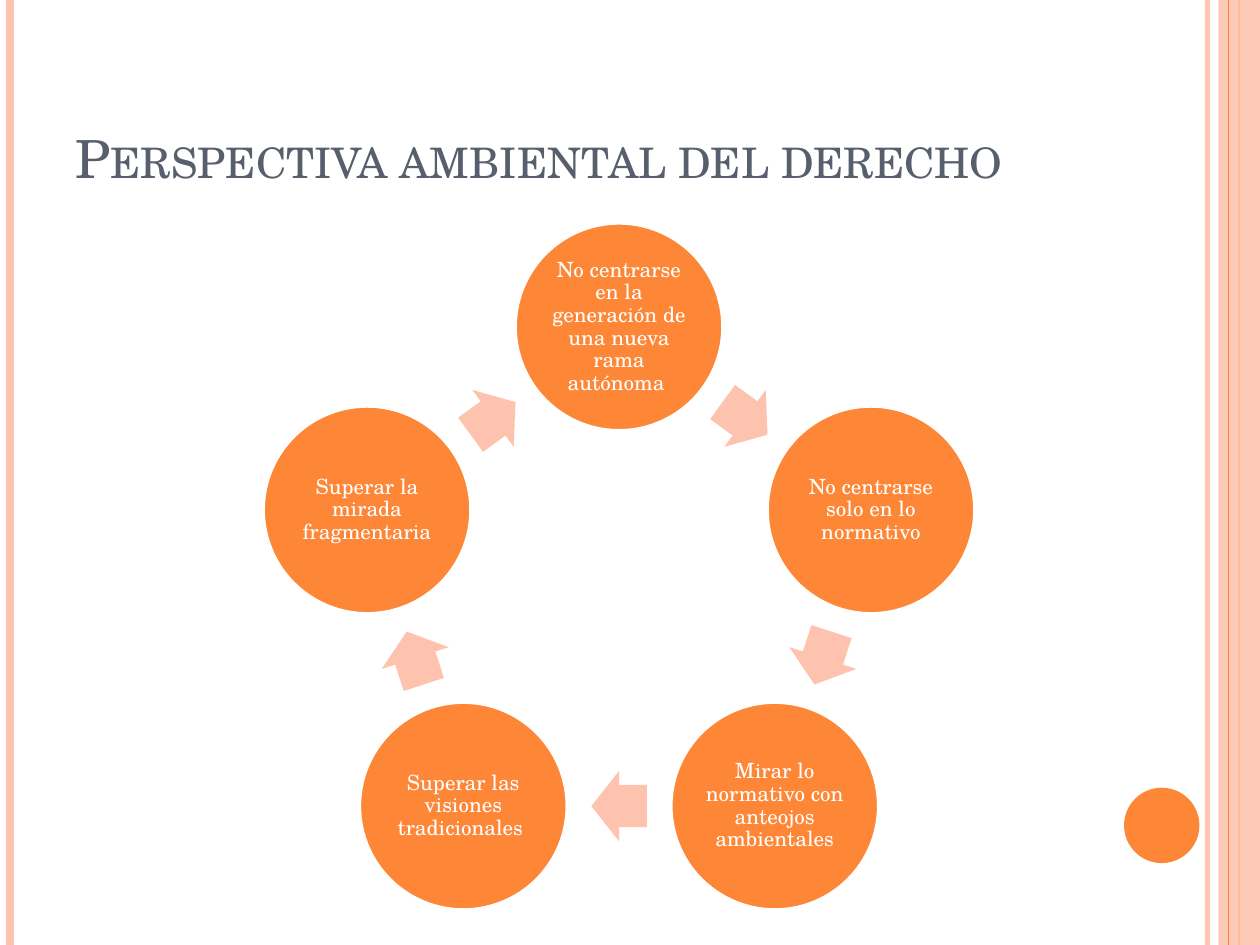
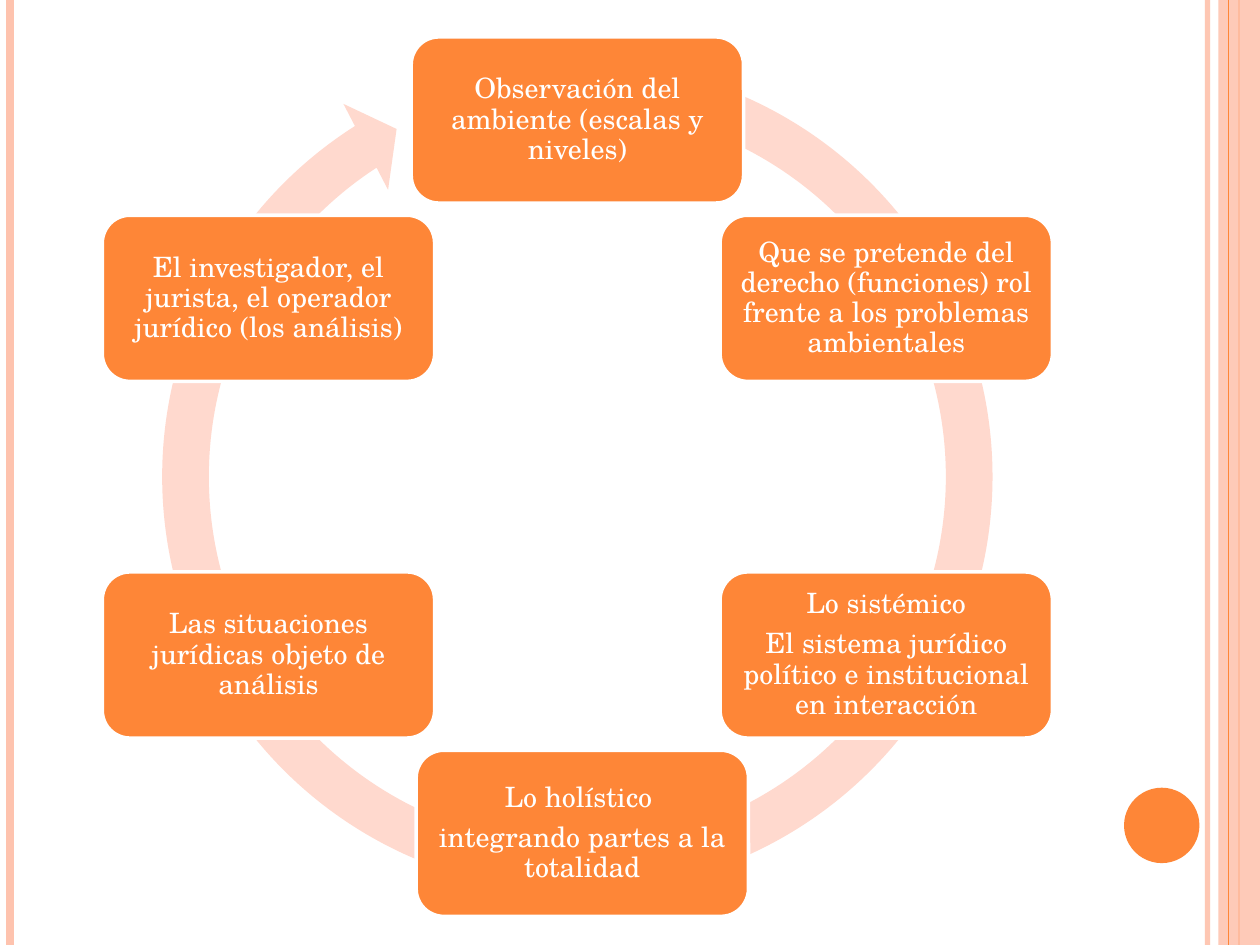
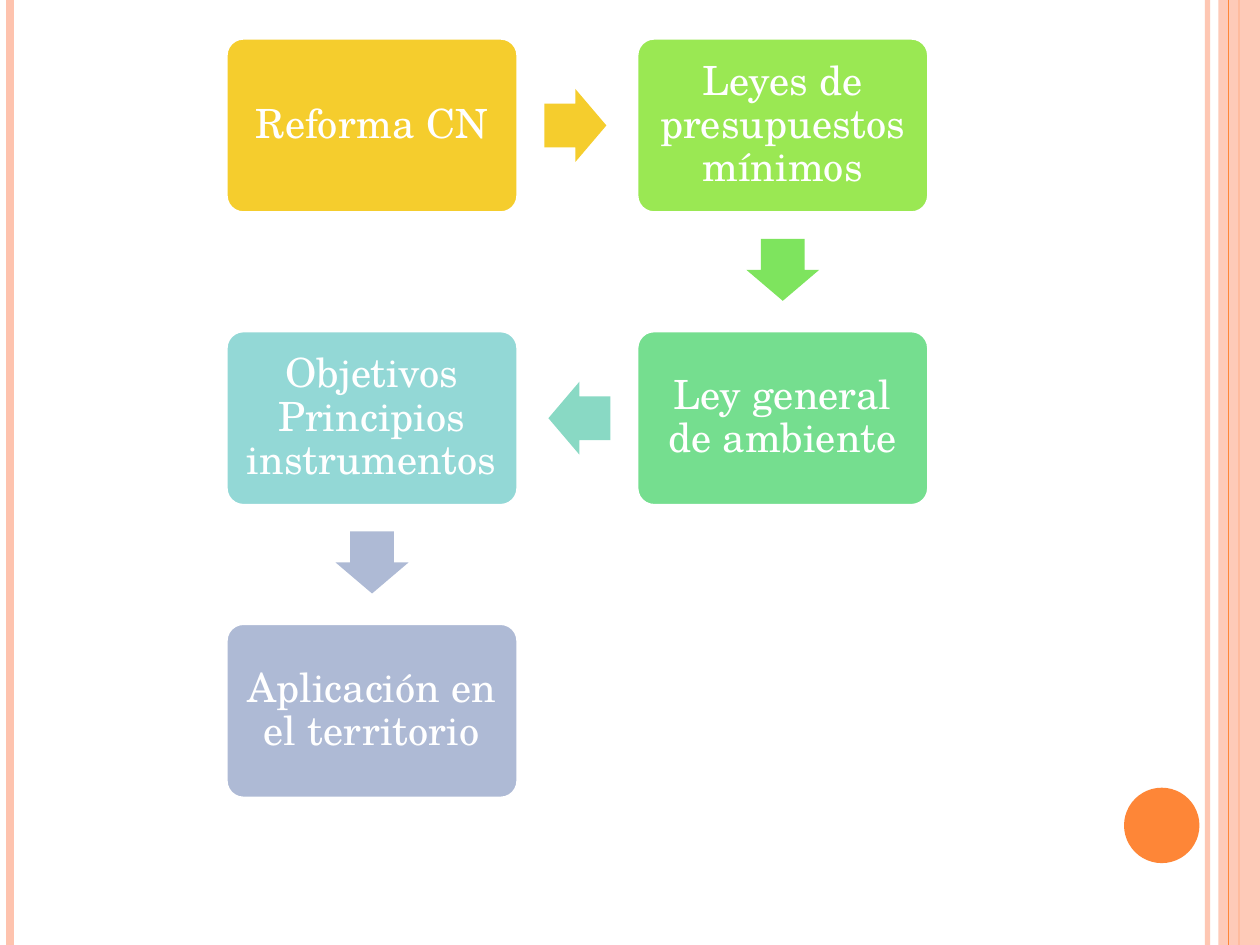
import math

import pptx
import pptx.dml.color
import pptx.enum.shapes
import pptx.enum.text
import pptx.oxml.ns
import pptx.util
from lxml import etree

Cm = pptx.util.Cm
Pt = pptx.util.Pt
rgb = pptx.dml.color.RGBColor.from_string
qn = pptx.oxml.ns.qn
Kind = pptx.enum.shapes.MSO_SHAPE
Align = pptx.enum.text.PP_ALIGN
Anchor = pptx.enum.text.MSO_ANCHOR

FONT = "TeX Gyre Schola"
HUES = {
    "white": "FFFFFF", "slate": "575F6D",
    "orange": "FE8637", "peach": "FEC3AE", "blush": "FFD9CE",
    "gold": "F5CD2D", "lime": "9AE853", "green": "7EE45E",
    "mint": "75DE8F", "teal": "89D9C4", "aqua": "93D8D6", "blue": "AEBAD5",
}


def node(slide, kind, mid, size, hue, text="", points=12, inset=0.0):
    """Filled shape centred on mid; with text it gets a white outline."""
    wide, high = size
    shape = slide.shapes.add_shape(kind, Cm(mid[0] - wide / 2), Cm(mid[1] - high / 2),
                                   Cm(wide), Cm(high))
    shape.shadow.inherit = False
    shape.fill.solid()
    shape.fill.fore_color.rgb = rgb(HUES[hue])
    if not text:
        shape.line.fill.background()
        return shape
    shape.line.color.rgb = rgb(HUES["white"])
    shape.line.width = Pt(2)
    frame = shape.text_frame
    frame.text = text
    frame.word_wrap = True
    frame.vertical_anchor = Anchor.MIDDLE
    frame.margin_left = frame.margin_right = Cm(inset)
    frame.margin_top = frame.margin_bottom = Cm(inset)
    for para in frame.paragraphs:
        para.alignment = Align.CENTER
        para.line_spacing = 0.9
        para.space_after = Pt(0.35 * points)
        for run in para.runs:
            run.font.name = FONT
            run.font.size = Pt(points)
            run.font.color.rgb = rgb(HUES["white"])
    return shape


def link(slide, start, end, size, hue, back=0.0):
    """Block arrow halfway from start to end, set back a little along its way."""
    turn = math.atan2(end[1] - start[1], end[0] - start[0])
    mid = ((start[0] + end[0]) / 2 - back * math.cos(turn),
           (start[1] + end[1]) / 2 - back * math.sin(turn))
    arrow = node(slide, Kind.RIGHT_ARROW, mid, size, hue)
    arrow.adjustments[0] = 0.6
    arrow.adjustments[1] = 0.5
    arrow.rotation = round(math.degrees(turn)) % 360


deck = pptx.Presentation()
deck.slide_width = Cm(25.4)
deck.slide_height = Cm(19.05)
first = deck.slides.add_slide(deck.slide_layouts[5])
second = deck.slides.add_slide(deck.slide_layouts[6])
third = deck.slides.add_slide(deck.slide_layouts[6])

# Shared trim: side lines, right band and ball, moved to the master
trim = []
for x, hue, width, alpha in [
    (24.34, "peach", 3, 93),
    (0.21, "peach", 4.5, 100),
    (24.98, "orange", 1.5, 100),
    (24.77, "orange", 0.75, 100),
]:
    line = first.shapes.add_connector(pptx.enum.shapes.MSO_CONNECTOR.STRAIGHT,
                                      Cm(x), 0, Cm(x), deck.slide_height)
    line.line.color.rgb = rgb(HUES[hue])
    line.line.width = Pt(width)
    etree.SubElement(line._element.spPr, qn("a:effectLst"))
    trim.append((line, alpha))
band = node(first, Kind.RECTANGLE, (24.98, 9.53), (0.84, 19.05), "peach")
trim.insert(3, (band, 87))
trim.append((node(first, Kind.OVAL, (23.42, 16.64), (1.52, 1.52), "orange"), 100))

tree = deck.slide_master.shapes._spTree
for count, (shape, alpha) in enumerate(trim):
    part = shape._element
    if alpha < 100:
        tone = next(part.iter(qn("a:srgbClr")))
        etree.SubElement(tone, qn("a:alpha"), val=str(alpha * 1000))
    next(part.iter(qn("p:cNvPr"))).set("id", str(100 + count))
    tree.append(part)

# Slide 1: title
title = first.shapes.title
title.left, title.top, title.width, title.height = Cm(1.27), Cm(0.76), Cm(20.75), Cm(3.18)
frame = title.text_frame
frame.text = "Perspectiva ambiental del derecho"
frame.auto_size = pptx.enum.text.MSO_AUTO_SIZE.NONE
frame.vertical_anchor = Anchor.BOTTOM
frame.paragraphs[0].alignment = Align.LEFT
run = frame.paragraphs[0].runs[0]
run.font.name = FONT
run.font.size = Pt(30)
run.font.color.rgb = rgb(HUES["slate"])
run._r.get_or_add_rPr().set("cap", "small")

# Slide 1: ring of five circles, clockwise from the top
goals = [
    "No centrarse en la generación de una nueva rama autónoma ",
    "No centrarse solo en lo normativo",
    "Mirar lo normativo con anteojos ambientales",
    "Superar las visiones tradicionales ",
    "Superar la mirada fragmentaria",
]
spots = []
for step in range(len(goals)):
    turn = math.tau * step / len(goals)
    spots.append((12.48 + 5.34 * math.sin(turn), 11.93 - 5.34 * math.cos(turn)))
for step, goal in enumerate(goals):
    node(first, Kind.OVAL, spots[step], (4.19, 4.19), "orange", goal, 12, 0.04)
    link(first, spots[step], spots[(step + 1) % len(goals)], (1.12, 1.42), "peach")

# Slide 2: round arrow behind six boxes
hub = (11.64, 9.61)
loop = node(second, Kind.CIRCULAR_ARROW, hub, (17.75, 17.75), "blush")
# thickness and head in percent of the size, angles in units of 5/3 degree
for spot, value in enumerate([5.3 / 100, 3.13, 142.39, 171.21, 5.5 / 100]):
    loop.adjustments[spot] = value

topics = [
    "Observación del ambiente (escalas y niveles)",
    "Que se pretende del derecho (funciones) rol frente a los problemas ambientales",
    "Lo sistémico\nEl sistema jurídico político e institucional en interacción",
    "Lo holístico \nintegrando partes a la totalidad",
    "Las situaciones jurídicas objeto de análisis",
    "El investigador, el jurista, el operador jurídico (los análisis)",
]
for step, topic in enumerate(topics):
    turn = math.tau * step / len(topics)
    shift = 0.1 if step == 3 else 0  # the bottom box sits slightly to the right
    mid = (hub[0] + 7.19 * math.sin(turn) + shift, hub[1] - 7.19 * math.cos(turn))
    node(second, Kind.ROUNDED_RECTANGLE, mid, (6.7, 3.35), "orange", topic, 16, 0.17)

# Slide 3: winding path of boxes on a grid (column, row, box hue, arrow hue)
stages = [
    ("Reforma CN", 0, 0, "gold", "gold"),
    ("Leyes de presupuestos mínimos", 1, 0, "lime", "green"),
    ("Ley general de ambiente", 1, 1, "mint", "teal"),
    ("Objetivos Principios instrumentos", 0, 1, "aqua", "blue"),
    ("Aplicación en el territorio", 0, 2, "blue", None),
]
spots = [(7.5 + 8.28 * col, 2.53 + 5.9 * row) for _, col, row, _, _ in stages]
for step, (text, _, _, hue, tint) in enumerate(stages):
    box = node(third, Kind.ROUNDED_RECTANGLE, spots[step], (5.89, 3.53), hue, text, 23, 0.24)
    box.adjustments[0] = 0.1
    if tint:
        link(third, spots[step], spots[step + 1], (1.25, 1.47), tint, 0.04)

deck.save("out.pptx")
